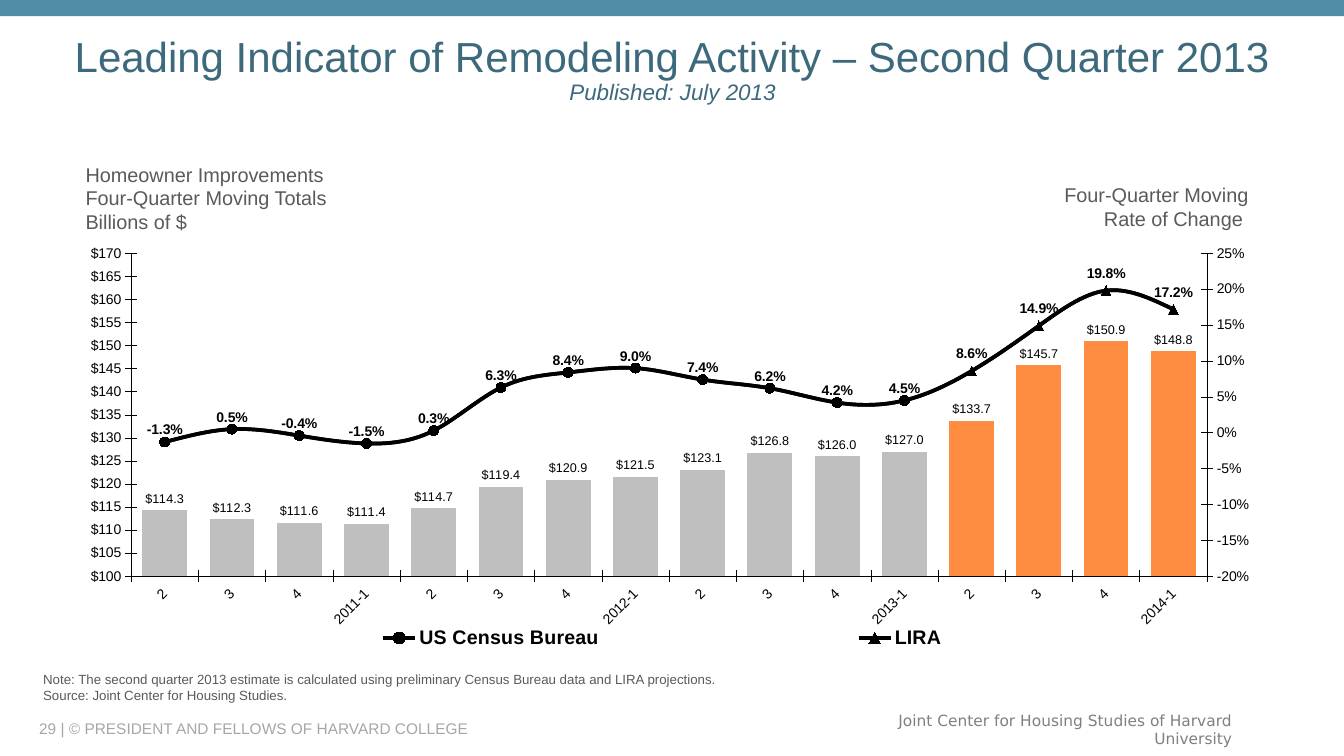
from copy import deepcopy
from dataclasses import dataclass

from pptx import Presentation
from pptx.chart.axis import ValueAxis
from pptx.chart.data import CategoryChartData
from pptx.dml.color import RGBColor
from pptx.enum.chart import (XL_CHART_TYPE, XL_LABEL_POSITION, XL_LEGEND_POSITION,
                             XL_MARKER_STYLE, XL_TICK_LABEL_POSITION, XL_TICK_MARK)
from pptx.enum.shapes import MSO_SHAPE
from pptx.enum.text import MSO_ANCHOR, PP_ALIGN
from pptx.oxml import parse_xml
from pptx.oxml.ns import nsdecls, qn
from pptx.util import Inches, Pt


@dataclass(frozen=True)
class Theme:
    font: str = "Arial"
    credit_font: str = "DejaVu Sans"
    banner: str = "508DA6"
    title: str = "3C6A7C"
    caption: str = "5A5A5A"
    footer: str = "A6A6A6"
    credit: str = "808080"
    ink: str = "000000"
    history: str = "BFBFBF"
    forecast: str = "FF8D41"
    title_size: float = 30
    subtitle_size: float = 16
    caption_size: float = 14.2
    legend_size: float = 14
    chart_size: float = 13.2
    footer_size: float = 11
    axis_size: float = 10
    note_size: float = 9.5
    bar_label_size: float = 9


QUARTERS = ["2", "3", "4", "2011-1", "2", "3", "4", "2012-1",
            "2", "3", "4", "2013-1", "2", "3", "4", "2014-1"]
SPENDING = [114.3, 112.3, 111.6, 111.4, 114.7, 119.4, 120.9, 121.5,
            123.1, 126.8, 126, 127, 133.7, 145.7, 150.9, 148.8]
CHANGE = [-0.013, 0.005, -0.004, -0.015, 0.003, 0.063, 0.084, 0.09,
          0.074, 0.062, 0.042, 0.045, 0.086, 0.149, 0.198, 0.172]
FORECAST_START = 12


def chart_xml(tag, content="", **attributes):
    values = "".join(f' {key}="{value}"' for key, value in attributes.items())
    return parse_xml(f"<c:{tag} {nsdecls('c')}{values}>{content}</c:{tag}>")


def place(element, index, x, y, w, h, inner=False):
    for old in element.findall(qn("c:layout")):
        element.remove(old)
    target = '<c:layoutTarget val="inner"/>' if inner else ""
    modes = '<c:xMode val="edge"/><c:yMode val="edge"/>'
    box = f'<c:x val="{x}"/><c:y val="{y}"/><c:w val="{w}"/><c:h val="{h}"/>'
    layout = f"<c:manualLayout>{target}{modes}{box}</c:manualLayout>"
    element.insert(index, chart_xml("layout", layout))


class SlideBuilder:
    def __init__(self, slide, theme):
        self.slide = slide
        self.theme = theme

    def style(self, font, size, color, bold=False, italic=False, name=None):
        font.name = name or self.theme.font
        font.size = Pt(size)
        font.bold = bold
        font.italic = italic
        font.color.rgb = RGBColor.from_string(color)

    def banner(self, left, top, width, height):
        band = self.slide.shapes.add_shape(
            MSO_SHAPE.RECTANGLE, Inches(left), Inches(top), Inches(width), Inches(height))
        band.shadow.inherit = False
        band.fill.solid()
        band.fill.fore_color.rgb = RGBColor.from_string(self.theme.banner)
        band.line.fill.background()

    def text(self, box, content, size, color, align=PP_ALIGN.LEFT,
             anchor=MSO_ANCHOR.TOP, name=None):
        frame = self.slide.shapes.add_textbox(*map(Inches, box)).text_frame
        frame.word_wrap = True
        frame.vertical_anchor = anchor
        frame.text = content
        for paragraph in frame.paragraphs:
            paragraph.alignment = align
            for run in paragraph.runs:
                self.style(run.font, size, color, name=name)
        return frame

    def title(self, box, headline, published):
        theme = self.theme
        frame = self.text(box, headline, theme.title_size, theme.title,
                          PP_ALIGN.CENTER, MSO_ANCHOR.MIDDLE)
        heading = frame.paragraphs[0]
        heading.line_spacing = 0.9
        heading.add_line_break()
        subtitle = heading.add_run()
        subtitle.text = published
        self.style(subtitle.font, theme.subtitle_size, theme.title, italic=True)

    def axis(self, axis):
        axis.major_tick_mark = XL_TICK_MARK.CROSS
        axis.minor_tick_mark = XL_TICK_MARK.NONE
        axis.tick_label_position = XL_TICK_LABEL_POSITION.LOW
        axis.has_major_gridlines = False
        axis.format.line.color.rgb = RGBColor.from_string(self.theme.ink)
        axis.format.line.width = Pt(0.33)
        self.style(axis.tick_labels.font, self.theme.axis_size, self.theme.ink)

    def scale(self, axis, low, high, step, number_format):
        axis.minimum_scale, axis.maximum_scale, axis.major_unit = low, high, step
        axis.tick_labels.number_format = number_format
        axis.tick_labels.number_format_is_linked = False

    def labels(self, series, number_format, position, size, bold=False):
        labels = series.data_labels
        labels.show_value = True
        labels.number_format = number_format
        labels.number_format_is_linked = False
        labels.position = position
        self.style(labels.font, size, self.theme.ink, bold)

    def rate_line(self, series, marker, hidden_points):
        ink = RGBColor.from_string(self.theme.ink)
        series.smooth = True
        series.format.line.color.rgb = ink
        series.format.line.width = Pt(2.64)
        series.marker.style = marker
        series.marker.size = 7
        series.marker.format.fill.solid()
        series.marker.format.fill.fore_color.rgb = ink
        series.marker.format.line.color.rgb = ink
        for index in hidden_points:
            point = series.points[index]
            point.marker.style = XL_MARKER_STYLE.NONE
            point.format.line.color.rgb = ink
            point.format.line.width = Pt(2.64)

    def move_rates_to_right_axis(self, chart):
        bars = chart.plots[0]
        left = chart.value_axis._element
        bar_plot = left.getparent().find(qn("c:barChart"))
        line_plot = chart_xml("lineChart", '<c:grouping val="standard"/><c:varyColors val="0"/>')
        for series in list(bars.series)[1:]:
            rates = series._element
            for flag in rates.findall(qn("c:invertIfNegative")):
                rates.remove(flag)
            line_plot.append(rates)
        line_plot.append(chart_xml("marker", val=1))
        bar_plot.addnext(line_plot)

        right = deepcopy(left)
        hidden = deepcopy(chart.category_axis._element)
        left.addnext(right)
        right.addnext(hidden)
        for axis, own, other in ((hidden, "5002", "5001"), (right, "5001", "5002")):
            axis.find(qn("c:axId")).set("val", own)
            axis.find(qn("c:crossAx")).set("val", other)
            line_plot.append(chart_xml("axId", val=own))
        right.find(qn("c:axPos")).set("val", "r")
        right.find(qn("c:crosses")).set("val", "max")
        hidden.find(qn("c:delete")).set("val", "1")
        right_axis = ValueAxis(right)
        right_axis.tick_label_position = XL_TICK_LABEL_POSITION.NEXT_TO_AXIS
        return right_axis

    def legend(self, chart):
        chart.has_legend = True
        legend = chart.legend
        legend.position = XL_LEGEND_POSITION.BOTTOM
        legend.include_in_layout = False
        self.style(legend.font, self.theme.legend_size, self.theme.ink, bold=True)
        legend._element.insert(
            1, chart_xml("legendEntry", '<c:idx val="0"/><c:delete val="1"/>'))
        place(legend._element, 2, 0.06, 0.92, 0.87, 0.08)

    def remodeling_chart(self, box):
        theme = self.theme
        data = CategoryChartData()
        data.categories = QUARTERS
        data.add_series("Series 1", SPENDING)
        data.add_series("US Census Bureau", CHANGE)
        data.add_series("LIRA", CHANGE)
        chart = self.slide.shapes.add_chart(
            XL_CHART_TYPE.COLUMN_CLUSTERED, *map(Inches, box), data).chart
        chart.has_title = False
        self.style(chart.font, theme.chart_size, theme.ink)
        quarter_axis, spending_axis = chart.category_axis, chart.value_axis
        self.axis(quarter_axis)
        self.axis(spending_axis)
        quarter_axis._element.find(qn("c:txPr")).find(qn("a:bodyPr")).set("rot", "-2700000")
        spending_axis._element.find(qn("c:crosses")).addnext(
            chart_xml("crossBetween", val="between"))
        rate_axis = self.move_rates_to_right_axis(chart)
        self.scale(spending_axis, 100, 170, 5, "\\$#,##0")
        self.scale(rate_axis, -0.2, 0.25, 0.05, "0%")
        place(spending_axis._element.getparent(), 0, 0.061, 0.062, 0.879, 0.754, inner=True)

        bars, lines = chart.plots
        bars.gap_width = 50
        bars.vary_by_categories = False
        spending = bars.series[0]
        forecast = range(FORECAST_START, len(QUARTERS))
        fills = [(spending, theme.history)]
        fills += [(spending.points[index], theme.forecast) for index in forecast]
        for part, color in fills:
            part.format.fill.solid()
            part.format.fill.fore_color.rgb = RGBColor.from_string(color)
        self.labels(spending, "\\$#,##0.0", XL_LABEL_POSITION.OUTSIDE_END, theme.bar_label_size)
        census, lira = lines.series
        self.rate_line(census, XL_MARKER_STYLE.CIRCLE, forecast)
        self.rate_line(lira, XL_MARKER_STYLE.TRIANGLE, range(FORECAST_START))
        self.labels(lira, "0.0%", XL_LABEL_POSITION.ABOVE, theme.axis_size, bold=True)
        self.legend(chart)


def main():
    deck = Presentation()
    deck.slide_width, deck.slide_height = Inches(13.33), Inches(7.5)
    theme = Theme()
    page = SlideBuilder(deck.slides.add_slide(deck.slide_layouts[6]), theme)
    page.text((0.29, 7.13, 7.92, 0.2), "29 | © PRESIDENT AND FELLOWS OF HARVARD COLLEGE",
              theme.footer_size, theme.footer, anchor=MSO_ANCHOR.MIDDLE)
    page.text((8.42, 7.09, 3.9, 0.29), "Joint Center for Housing Studies of Harvard University",
              theme.footer_size, theme.credit, PP_ALIGN.RIGHT, MSO_ANCHOR.MIDDLE, theme.credit_font)
    page.banner(0, 0, 13.33, 0.16)
    page.title((0.56, 0.33, 12.22, 0.75),
               "Leading Indicator of Remodeling Activity – Second Quarter 2013",
               "Published: July 2013")
    page.text((0.75, 1.56, 3.83, 0.82),
              "Homeowner Improvements\nFour-Quarter Moving Totals\nBillions of $",
              theme.caption_size, theme.caption)
    page.text((8.42, 1.76, 4.06, 0.58), "Four-Quarter Moving\nRate of Change ",
              theme.caption_size, theme.caption, PP_ALIGN.RIGHT)
    page.remodeling_chart((0.56, 2.25, 12.14, 4.25))
    page.text((0.33, 6.61, 10.07, 0.42),
              "Note: The second quarter 2013 estimate is calculated using preliminary Census "
              "Bureau data and LIRA projections.\nSource: Joint Center for Housing Studies.",
              theme.note_size, theme.caption)
    deck.save("out.pptx")


if __name__ == "__main__":
    main()
